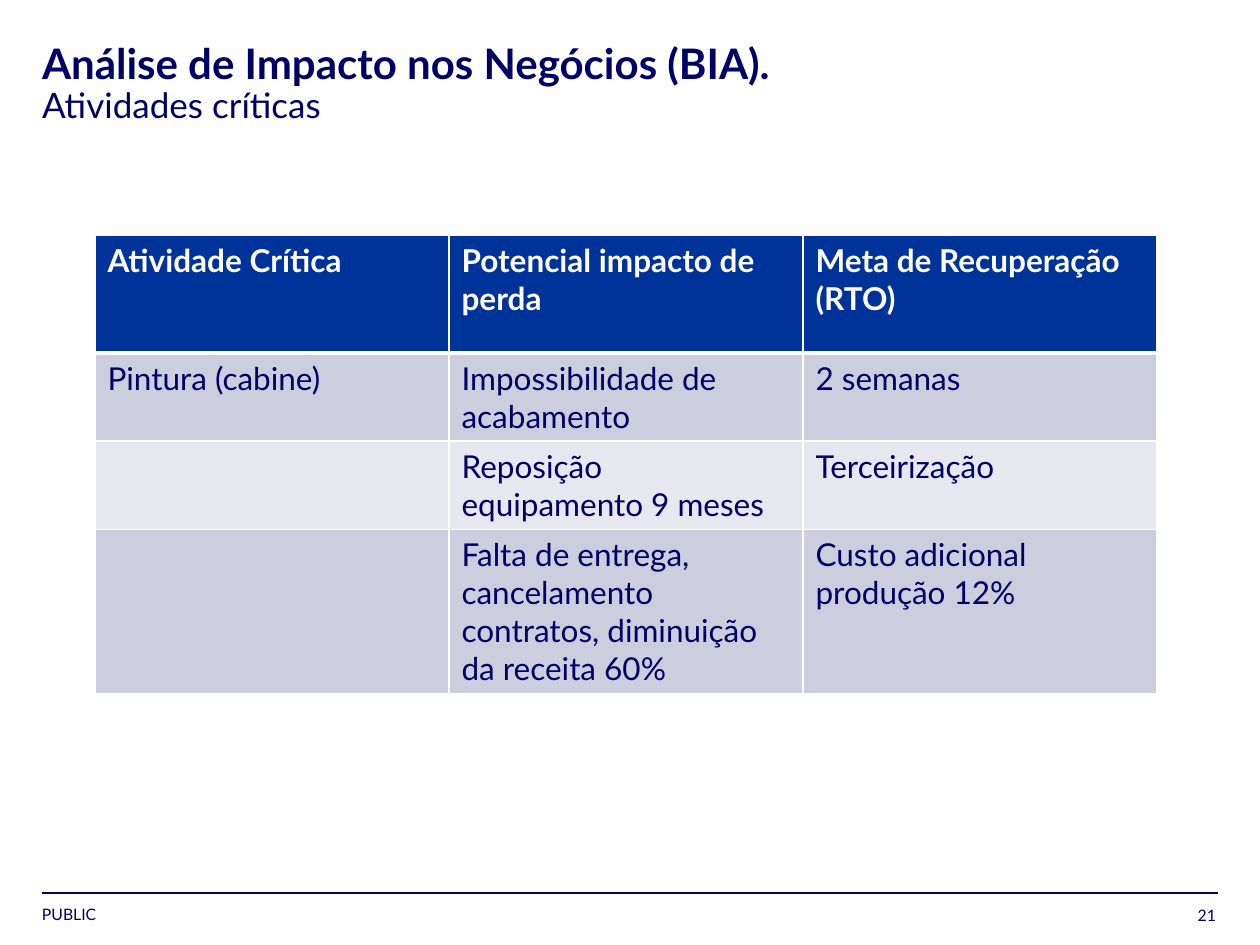
from lxml import etree
from pptx import Presentation
from pptx.dml.color import RGBColor
from pptx.enum.shapes import MSO_CONNECTOR
from pptx.enum.text import MSO_ANCHOR, MSO_AUTO_SIZE, PP_ALIGN
from pptx.oxml.ns import qn
from pptx.util import Emu, Pt

STRAIGHT = MSO_CONNECTOR.STRAIGHT
TOP, BOTTOM = MSO_ANCHOR.TOP, MSO_ANCHOR.BOTTOM
LEFT, RIGHT = PP_ALIGN.LEFT, PP_ALIGN.RIGHT
NO_AUTOFIT = MSO_AUTO_SIZE.NONE

NAVY = RGBColor(0x00, 0x00, 0x66)
BLUE = RGBColor(0x00, 0x33, 0x99)
WHITE = RGBColor(0xFF, 0xFF, 0xFF)
BAND_DARK = RGBColor(0xCC, 0xCE, 0xDE)
BAND_LIGHT = RGBColor(0xE7, 0xE8, 0xEF)

FONT = "Lato"
PX_PER_INCH = 126
TITLE_ONLY = 5

ROW_HEIGHTS = [118, 88, 88, 163]
COLUMN_WIDTH = 354
ACTIVITIES = [
    ["Atividade Crítica", "Potencial impacto de perda", "Meta de Recuperação (RTO)"],
    ["Pintura (cabine)", "Impossibilidade de acabamento", "2 semanas"],
    ["", "Reposição equipamento 9 meses", "Terceirização"],
    ["", "Falta de entrega, cancelamento contratos, diminuição da receita 60%",
     "Custo adicional produção 12%"],
]


def px(length):
    return Emu(round(length * 914400 / PX_PER_INCH))


def add_span(para, text, size, color=NAVY, bold=False):
    span = para.add_run()
    span.text = text
    formats = {"name": FONT, "size": Pt(size), "bold": bold}
    for name, value in formats.items():
        setattr(span.font, name, value)
    span.font.color.rgb = color


def format_frame(frame, anchor, wrap=True):
    formats = {"margin_left": 0, "margin_top": 0, "margin_right": 0, "margin_bottom": 0,
               "vertical_anchor": anchor, "word_wrap": wrap, "auto_size": NO_AUTOFIT}
    for name, value in formats.items():
        setattr(frame, name, value)


def set_title(page, heading, subheading):
    title = page.shapes.title
    title.left, title.top, title.width, title.height = map(px, (42, 43, 1055, 49))
    format_frame(title.text_frame, TOP)
    para = title.text_frame.paragraphs[0]
    para.alignment = LEFT
    para.line_spacing = 0.9
    add_span(para, heading, 24, bold=True)
    para.add_line_break()
    add_span(para, subheading, 20)


def add_footer_text(page, text, left, top, width, height, anchor, align, wrap):
    box = page.shapes.add_textbox(px(left), px(top), px(width), px(height))
    format_frame(box.text_frame, anchor, wrap)
    para = box.text_frame.paragraphs[0]
    para.alignment = align
    add_span(para, text, 9)


def add_footer_rule(page):
    rule = page.shapes.add_connector(STRAIGHT, px(42), px(893), px(1218), px(893))
    rule.line.color.rgb = NAVY
    rule.line.width = Pt(1)
    etree.SubElement(rule._element.spPr, qn("a:effectLst"))


def set_borders(cell, widths):
    """Draw white cell borders; widths maps a side tag to points."""
    properties = cell._tc.get_or_add_tcPr()
    for position, (side, width) in enumerate(widths.items()):
        line = etree.Element(qn(f"a:{side}"), w=str(Pt(width)))
        fill = etree.SubElement(line, qn("a:solidFill"))
        etree.SubElement(fill, qn("a:srgbClr"), val=str(WHITE))
        properties.insert(position, line)


def add_activity_table(page):
    columns = len(ACTIVITIES[0])
    table = page.shapes.add_table(
        len(ACTIVITIES), columns, px(95), px(235),
        px(columns * COLUMN_WIDTH), px(sum(ROW_HEIGHTS))).table
    for column in table.columns:
        column.width = px(COLUMN_WIDTH)
    for index, (texts, height) in enumerate(zip(ACTIVITIES, ROW_HEIGHTS)):
        table.rows[index].height = px(height)
        header = index == 0
        band = BAND_DARK if index % 2 else BAND_LIGHT
        widths = {"lnL": 1, "lnR": 1, "lnT": 3 if index == 1 else 1,
                  "lnB": 3 if header else 1}
        for cell, text in zip(table.rows[index].cells, texts):
            cell.fill.solid()
            cell.fill.fore_color.rgb = BLUE if header else band
            set_borders(cell, widths)
            if text:
                add_span(cell.text_frame.paragraphs[0], text, 18,
                         WHITE if header else NAVY, header)


def main():
    deck = Presentation()
    deck.slide_width, deck.slide_height = px(1260), px(945)
    page = deck.slides.add_slide(deck.slide_layouts[TITLE_ONLY])
    add_footer_rule(page)
    add_footer_text(page, "PUBLIC", 42, 905, 161, 19, TOP, LEFT, False)
    add_footer_text(page, "21", 1150, 905, 66, 20, BOTTOM, RIGHT, True)
    set_title(page, "Análise de Impacto nos Negócios (BIA).", "Atividades críticas")
    add_activity_table(page)
    deck.save("out.pptx")


if __name__ == "__main__":
    main()
